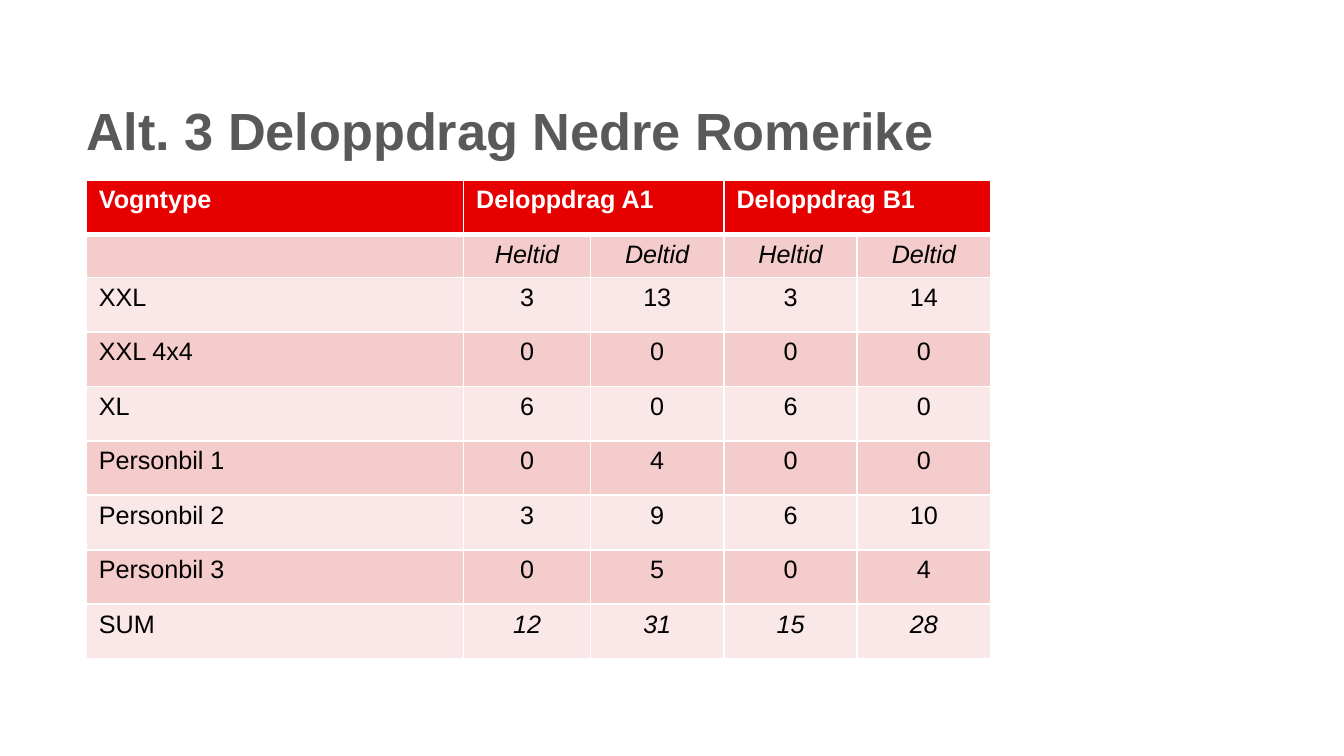
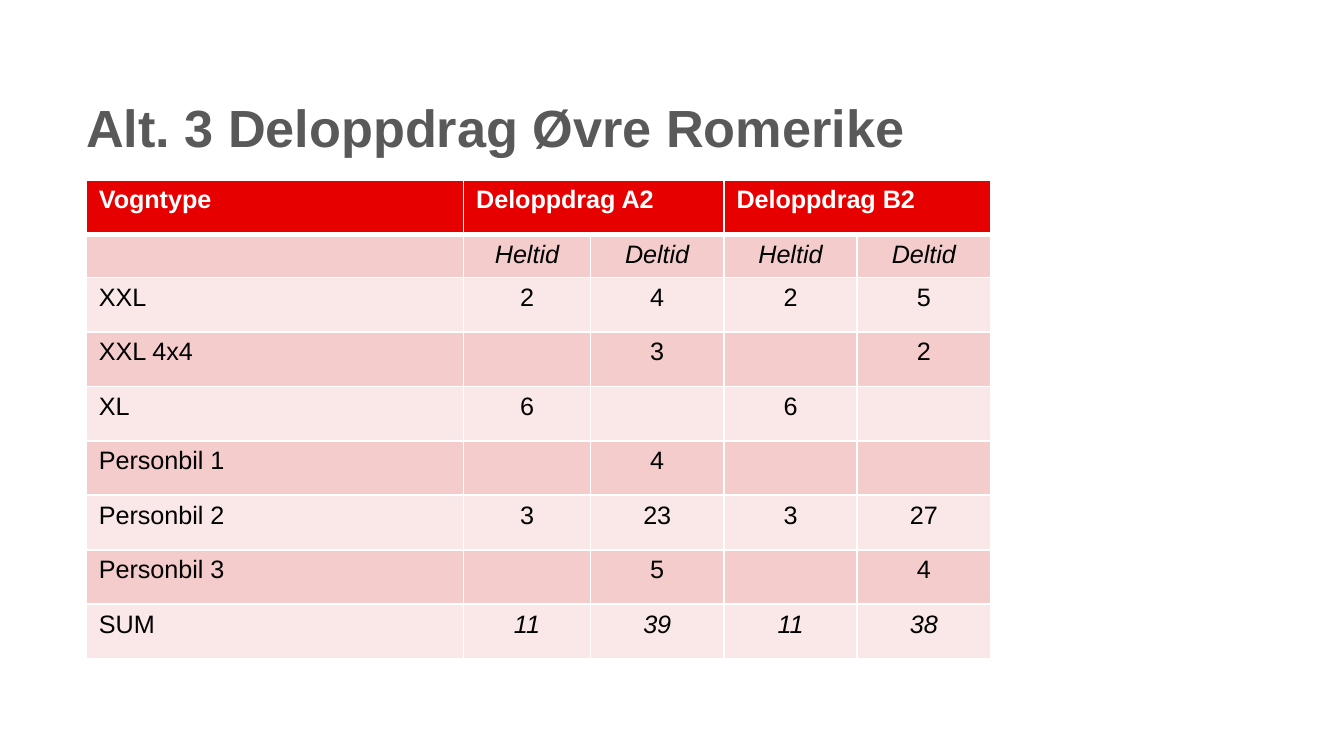
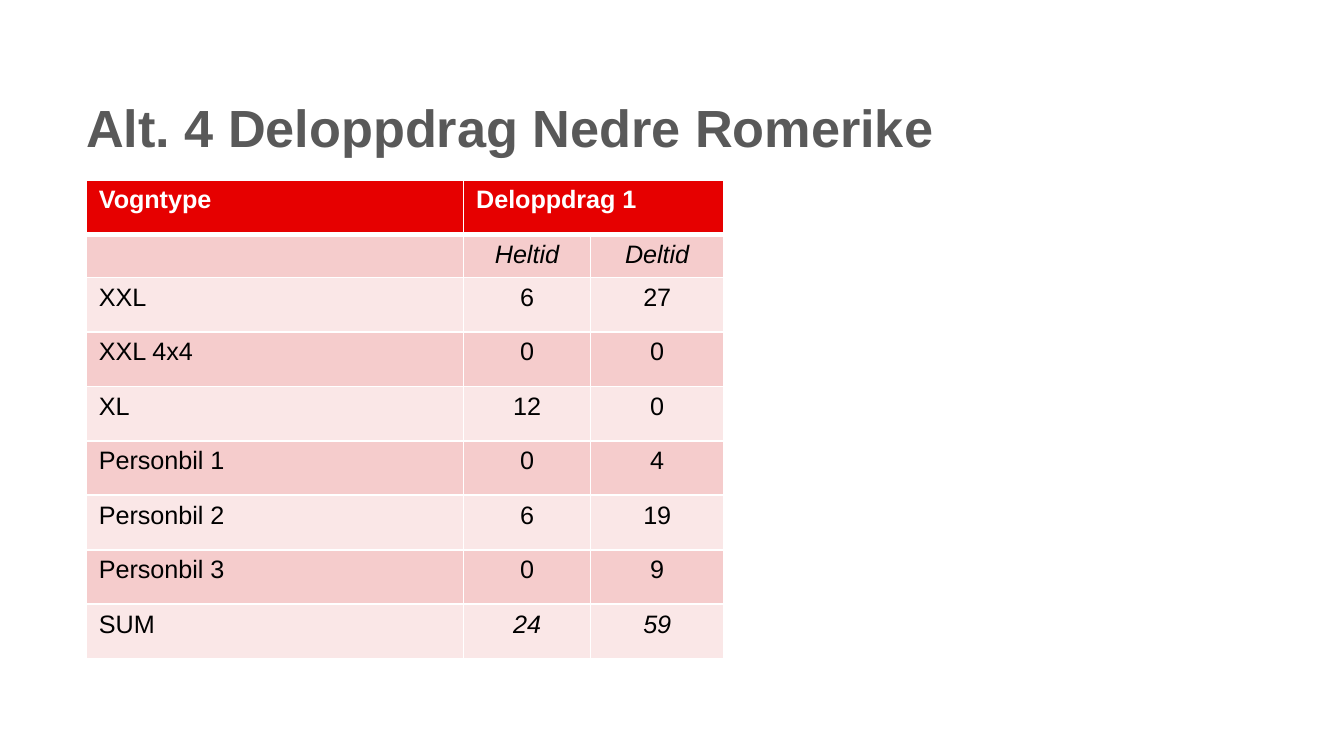
from lxml import etree
from pptx import Presentation
from pptx.dml.color import RGBColor
from pptx.enum.text import MSO_ANCHOR, PP_ALIGN
from pptx.oxml.ns import qn
from pptx.util import Cm, Pt

MIDDLE = MSO_ANCHOR.MIDDLE
LEFT, CENTER = PP_ALIGN.LEFT, PP_ALIGN.CENTER

FONT = "Arial"
GREY, RED, WHITE, BLACK = "595959", "E60000", "FFFFFF", "000000"
BANDS = ["FAE7E7", "F5CCCC"]
TITLE_FORMAT = {"name": FONT, "size": Pt(28), "bold": True}
HEADER_FORMAT = {"name": FONT, "size": Pt(13.5), "bold": True, "italic": False}
BODY_FORMAT = {"name": FONT, "size": Pt(13.5), "bold": False, "italic": False}
ITALIC_FORMAT = {**BODY_FORMAT, "italic": True}
CELL_MARGINS = {"margin_left": Cm(0.24), "margin_right": Cm(0.24),
                "margin_top": Cm(0.12), "margin_bottom": Cm(0.11)}

LEFT_EDGE = 1.63
COL_WIDTHS = [7.13, 2.4, 2.52, 2.52, 2.52]
ROW_HEIGHTS = [1.04, 0.76] + [1.03] * 7
VEHICLES = ["XXL", "XXL 4x4", "XL", "Personbil 1", "Personbil 2", "Personbil 3"]

SLIDES = [
    ("Alt. 3 Deloppdrag Nedre Romerike", 1.85, ["Deloppdrag A1", "Deloppdrag B1"],
     [[3, 13, 3, 14], [0, 0, 0, 0], [6, 0, 6, 0],
      [0, 4, 0, 0], [3, 9, 6, 10], [0, 5, 0, 4]]),
    ("Alt. 3 Deloppdrag Øvre Romerike", 1.8, ["Deloppdrag A2", "Deloppdrag B2"],
     [[2, 4, 2, 5], ["", 3, "", 2], [6, "", 6, ""],
      ["", 4, "", ""], [3, 23, 3, 27], ["", 5, "", 4]]),
    ("Alt. 4 Deloppdrag Nedre Romerike", 1.8, ["Deloppdrag 1"],
     [[6, 27], [0, 0], [12, 0], [0, 4], [6, 19], [0, 9]]),
]


def write(p, text, color, formats):
    if text == "":
        etree.SubElement(p._p, qn("a:endParaRPr"), sz=str(int(formats["size"].pt * 100)))
        return
    r = p.add_run()
    r.text = str(text)
    r.font.color.rgb = RGBColor.from_string(color)
    for name, value in formats.items():
        setattr(r.font, name, value)


def add_border(cell, side, points):
    ln = etree.SubElement(cell._tc.get_or_add_tcPr(), qn(f"a:ln{side}"), w=str(Pt(points)))
    fill = etree.SubElement(ln, qn("a:solidFill"))
    etree.SubElement(fill, qn("a:srgbClr"), val=WHITE)


prs = Presentation()
prs.slide_width, prs.slide_height = Cm(25.4), Cm(14.29)

for title, title_top, groups, counts in SLIDES:
    s = prs.slides.add_slide(prs.slide_layouts[6])

    sp = s.shapes.add_textbox(Cm(LEFT_EDGE), Cm(title_top), Cm(22.17), Cm(1.19))
    tf = sp.text_frame
    tf.word_wrap = True
    tf.vertical_anchor = MIDDLE
    tf.margin_left = tf.margin_right = tf.margin_top = tf.margin_bottom = 0
    write(tf.paragraphs[0], title, GREY, TITLE_FORMAT)

    header = ["Vogntype"]
    for group in groups:
        header += [group, ""]
    sums = [sum(n for n in column if n != "") for column in zip(*counts)]
    rows = [header, [""] + ["Heltid", "Deltid"] * len(groups)]
    rows += [[vehicle] + values for vehicle, values in zip(VEHICLES, counts)]
    rows.append(["SUM"] + sums)

    widths = COL_WIDTHS[:len(header)]
    table = s.shapes.add_table(len(rows), len(widths), Cm(LEFT_EDGE), Cm(3.4),
                               Cm(sum(widths)), Cm(sum(ROW_HEIGHTS))).table
    table.horz_banding = False
    for column, width in zip(table.columns, widths):
        column.width = Cm(width)
    for row, height in zip(table.rows, ROW_HEIGHTS):
        row.height = Cm(height)

    for i, texts in enumerate(rows):
        for j, text in enumerate(texts):
            cell = table.cell(i, j)
            for name, value in CELL_MARGINS.items():
                setattr(cell, name, value)
            for side in "LRTB":
                add_border(cell, side, 3 if (i, side) in [(0, "B"), (1, "T")] else 1)
            cell.fill.solid()
            cell.fill.fore_color.rgb = RGBColor.from_string(BANDS[i % 2] if i else RED)
            p = cell.text_frame.paragraphs[0]
            p.alignment = CENTER if i and j else LEFT
            if i == 0:
                formats = HEADER_FORMAT
            elif j and i in (1, len(rows) - 1):
                formats = ITALIC_FORMAT
            else:
                formats = BODY_FORMAT
            write(p, text, BLACK if i else WHITE, formats)

    for j in range(1, len(widths), 2):
        table.cell(0, j).merge(table.cell(0, j + 1))

prs.save("out.pptx")
